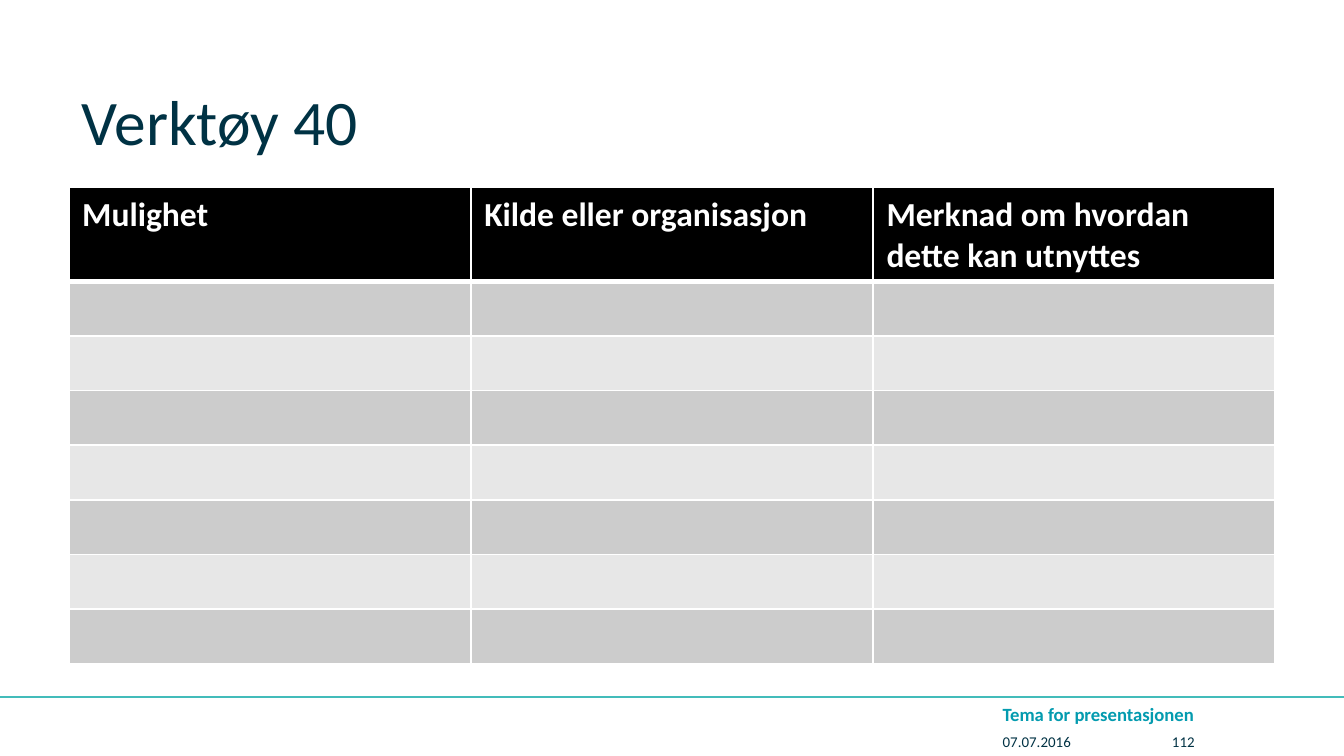
from lxml import etree
from pptx import Presentation
from pptx import util as u
from pptx.dml.color import RGBColor
from pptx.enum import shapes, text
from pptx.oxml.ns import qn

NAVY = RGBColor(0x00, 0x32, 0x44)
TEAL = RGBColor(0x03, 0x9B, 0xAF)
TURQUOISE = RGBColor(0x43, 0xBC, 0xBA)
WHITE = RGBColor(0xFF, 0xFF, 0xFF)
BLACK = RGBColor(0x00, 0x00, 0x00)
DARK_BAND = RGBColor(0xCC, 0xCC, 0xCC)
LIGHT_BAND = RGBColor(0xE7, 0xE7, 0xE7)

TITLE_FORMAT = {"name": "Calibri", "size": u.Pt(34), "bold": False}
HEADING_FORMAT = {"name": "Calibri", "size": u.Pt(18), "bold": True}
THEME_FORMAT = {"name": "Calibri", "size": u.Pt(10), "bold": True}
DETAIL_FORMAT = {"name": "Calibri", "size": u.Pt(8), "bold": False}

SLIDE_WIDTH, SLIDE_HEIGHT = u.Cm(25.4), u.Cm(14.29)
HEADINGS = ["Mulighet", "Kilde eller organisasjon", "Merknad om hvordan dette kan utnyttes"]
EMPTY_ROWS = 7


def format_font(font, values, color):
    for attribute, value in values.items():
        setattr(font, attribute, value)
    font.color.rgb = color


def add_label(slide, box, wording, values, color, anchor, inset_y):
    label = slide.shapes.add_textbox(*box)
    frame = label.text_frame
    layout = {
        "word_wrap": True, "vertical_anchor": anchor,
        "margin_left": u.Cm(0.25), "margin_right": u.Cm(0.25),
        "margin_top": inset_y, "margin_bottom": inset_y,
    }
    for attribute, value in layout.items():
        setattr(frame, attribute, value)
    run = frame.paragraphs[0].add_run()
    run.text = wording
    format_font(run.font, values, color)


def add_title(slide, box):
    add_label(slide, box, "Verktøy 40", TITLE_FORMAT, NAVY,
              text.MSO_ANCHOR.BOTTOM, u.Cm(0.13))


def add_cell_borders(cell, widths):
    """Draw white borders; widths maps a side (L, R, T, B) to points."""
    properties = cell._tc.get_or_add_tcPr()
    for side, points in widths.items():
        border = etree.SubElement(properties, qn(f"a:ln{side}"), w=str(u.Pt(points)))
        fill = etree.SubElement(border, qn("a:solidFill"))
        etree.SubElement(fill, qn("a:srgbClr"), val=str(WHITE))


def add_opportunity_table(slide, box):
    left, top, width, height = box
    table = slide.shapes.add_table(EMPTY_ROWS + 1, len(HEADINGS), *box).table
    header_height = u.Cm(1.77)
    for column in table.columns:
        column.width = width // len(HEADINGS)
    for index, row in enumerate(table.rows):
        is_header = index == 0
        row.height = header_height if is_header else (height - header_height) // EMPTY_ROWS
        band = BLACK if is_header else DARK_BAND if index % 2 else LIGHT_BAND
        widths = {"L": 1, "R": 1, "T": 3 if index == 1 else 1, "B": 3 if is_header else 1}
        for cell in row.cells:
            add_cell_borders(cell, widths)
            cell.fill.solid()
            cell.fill.fore_color.rgb = band
    for cell, heading in zip(table.rows[0].cells, HEADINGS):
        run = cell.text_frame.paragraphs[0].add_run()
        run.text = heading
        format_font(run.font, HEADING_FORMAT, WHITE)


def add_footer(slide, box):
    left, top, width, height = box
    rule = slide.shapes.add_connector(shapes.MSO_CONNECTOR.STRAIGHT, left, top, left + width, top)
    rule.line.color.rgb = TURQUOISE
    rule.line.width = u.Pt(1)
    etree.SubElement(rule._element.spPr, qn("a:effectLst"))

    theme_left, detail_top = left + u.Cm(18.7), top + u.Cm(0.69)
    entries = [
        ((theme_left, top + u.Cm(0.08), u.Cm(6), u.Cm(0.46)),
         "Tema for presentasjonen", THEME_FORMAT, TEAL),
        ((theme_left, detail_top, u.Cm(3), u.Cm(0.3)), "07.07.2016", DETAIL_FORMAT, NAVY),
        ((left + u.Cm(21.9), detail_top, u.Cm(1.8), u.Cm(0.3)), "112", DETAIL_FORMAT, NAVY),
    ]
    for entry in entries:
        add_label(slide, *entry, text.MSO_ANCHOR.MIDDLE, 0)


def main():
    presentation = Presentation()
    presentation.slide_width, presentation.slide_height = SLIDE_WIDTH, SLIDE_HEIGHT
    slide = presentation.slides.add_slide(presentation.slide_layouts[6])
    margin, content_width = u.Cm(1.3), u.Cm(22.8)
    footer_top = u.Cm(13.18)
    add_title(slide, (margin, u.Cm(1.4), content_width, u.Cm(1.73)))
    add_opportunity_table(slide, (margin, u.Cm(3.54), content_width, u.Cm(9)))
    add_footer(slide, (0, footer_top, SLIDE_WIDTH, SLIDE_HEIGHT - footer_top))
    presentation.save("out.pptx")


if __name__ == "__main__":
    main()
